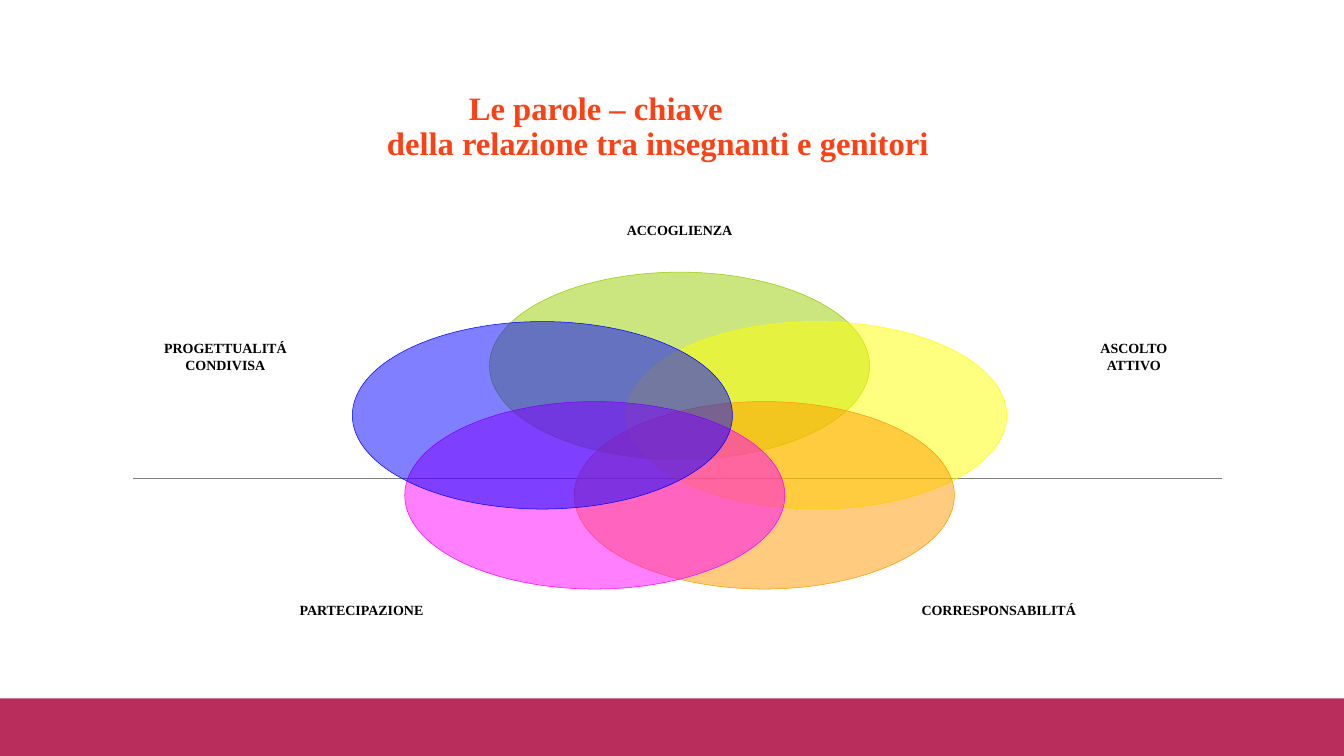
from math import cos, radians, sin

from lxml.etree import SubElement
from pptx import Presentation
from pptx.dml.color import RGBColor
from pptx.enum.shapes import MSO_CONNECTOR as CONNECTOR, MSO_SHAPE as SHAPE
from pptx.enum.text import MSO_ANCHOR as ANCHOR, MSO_AUTO_SIZE as AUTO_SIZE, PP_ALIGN as ALIGN
from pptx.oxml.ns import qn
from pptx.util import Inches, Pt

FONT = "Times New Roman"
CRIMSON = RGBColor(0xB9, 0x2D, 0x5D)
GRAY = RGBColor(0x80, 0x80, 0x80)
RED_ORANGE = RGBColor(0xFF, 0x40, 0x15)
BLACK = RGBColor(0x00, 0x00, 0x00)
GREEN = RGBColor(0x99, 0xCC, 0x00)
YELLOW = RGBColor(0xFF, 0xFF, 0x00)
ORANGE = RGBColor(0xFF, 0x99, 0x00)
MAGENTA = RGBColor(0xFF, 0x00, 0xFF)
BLUE = RGBColor(0x00, 0x00, 0xFF)


def add_text(paragraph, text, size, color):
    run = paragraph.add_run()
    run.text = text
    run.font.name = FONT
    run.font.size = Pt(size)
    run.font.bold = True
    run.font.color.rgb = color


prs = Presentation()
prs.slide_width, prs.slide_height = Inches(13.33), Inches(7.5)
slide = prs.slides.add_slide(prs.slide_layouts[5])
shapes = slide.shapes

footer_band = shapes.add_shape(SHAPE.RECTANGLE, 0, Inches(6.93), Inches(13.33), Inches(0.57))
footer_band.shadow.inherit = False
footer_band.fill.solid()
footer_band.fill.fore_color.rgb = CRIMSON
footer_band.line.fill.background()

divider = shapes.add_connector(CONNECTOR.STRAIGHT, Inches(1.32), Inches(4.75), Inches(12.12), Inches(4.75))
divider.line.color.rgb = GRAY
divider.line.width = Pt(0.5)
SubElement(divider._element.spPr, qn("a:effectLst"))

heading = shapes.title
heading.left, heading.top = Inches(-0.3), Inches(0.83)
heading.width, heading.height = Inches(12.5), Inches(0.87)
heading.text_frame.auto_size = AUTO_SIZE.NONE
heading.text_frame.vertical_anchor = ANCHOR.MIDDLE
heading_lines = heading.text_frame.paragraphs[0]
heading_lines.alignment = ALIGN.CENTER
heading_lines.line_spacing = 0.9
indents = heading_lines._p.get_or_add_pPr()
indents.set("marL", str(Inches(1.15)))
indents.set("indent", str(Inches(-1.15)))
add_text(heading_lines, "Le parole – chiave ", 23.3, RED_ORANGE)
heading_lines.add_line_break()
add_text(heading_lines, "della relazione tra insegnanti e genitori", 23.3, RED_ORANGE)

keywords = [
    (GREEN, ["ACCOGLIENZA"], 6.21, 2.19, 1.06),
    (YELLOW, ["ASCOLTO", "ATTIVO"], 10.89, 3.36, 0.71),
    (ORANGE, ["CORRESPONSABILITÁ"], 9.13, 5.96, 1.55),
    (MAGENTA, ["PARTECIPAZIONE"], 2.96, 5.96, 1.25),
    (BLUE, ["PROGETTUALITÁ", "CONDIVISA"], 1.6, 3.36, 1.27),
]
center_x, center_y = 6.74, 4.34
orbit_x, orbit_y = 1.43, 0.71
petal_width, petal_height = 3.77, 1.86

for position, (color, words, left, top, width) in enumerate(keywords):
    angle = radians(position * 360 / len(keywords))
    petal = shapes.add_shape(
        SHAPE.OVAL,
        Inches(center_x + orbit_x * sin(angle) - petal_width / 2),
        Inches(center_y - orbit_y * cos(angle) - petal_height / 2),
        Inches(petal_width), Inches(petal_height))
    petal.shadow.inherit = False
    petal.fill.solid()
    petal.fill.fore_color.rgb = color
    fill_color = petal._element.spPr.find(qn("a:solidFill")).find(qn("a:srgbClr"))
    SubElement(fill_color, qn("a:alpha"), val="50000")
    petal.line.color.rgb = color
    petal.line.width = Pt(0.37)

    keyword = shapes.add_textbox(Inches(left), Inches(top), Inches(width), Inches(0.18 * len(words)))
    frame = keyword.text_frame
    frame.margin_left = frame.margin_right = frame.margin_top = frame.margin_bottom = 0
    frame.word_wrap = False
    frame.auto_size = AUTO_SIZE.SHAPE_TO_FIT_TEXT
    frame.vertical_anchor = ANCHOR.MIDDLE
    for row, word in enumerate(words):
        paragraph = frame.add_paragraph() if row else frame.paragraphs[0]
        paragraph.alignment = ALIGN.CENTER
        add_text(paragraph, word, 10, BLACK)

prs.save("out.pptx")
